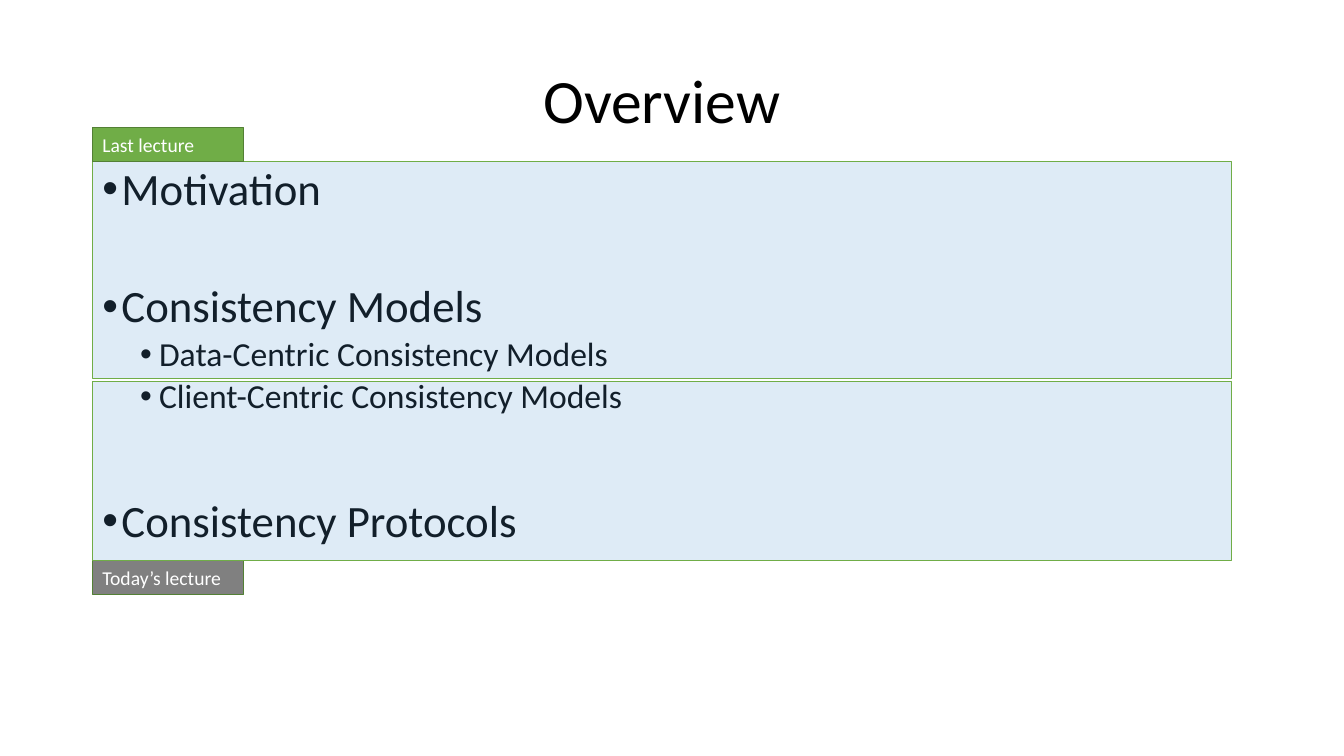
from lxml.etree import SubElement
from pptx import Presentation
from pptx.dml.color import RGBColor
from pptx.enum.shapes import MSO_SHAPE
from pptx.enum.text import MSO_ANCHOR, PP_ALIGN
from pptx.oxml.ns import qn
from pptx.util import Cm, Pt

FONT = "Calibri"
GREEN = "70AD47"
DARK_GREEN = "538035"
GREY = "808080"
BLUE = "5B9BD5"
LEFT, WIDTH = 2.33, 28.7
LABEL_WIDTH, LABEL_HEIGHT = 3.81, 0.86

# text, level, space before in points
TOPICS = [
    ("Motivation", 0, 0),
    ("Consistency Models", 0, 49.5),
    ("Data-Centric Consistency Models", 1, 3.8),
    ("Client-Centric Consistency Models", 1, 3.8),
    ("Consistency Protocols", 0, 59),
]
SIZES = [32, 24]
INDENTS = [0.48, 1.43]
HANGING = 0.48


def colour(hex_code):
    return RGBColor.from_string(hex_code)


def format_font(paragraph, size, hex_code):
    paragraph.font.name = FONT
    paragraph.font.size = Pt(size)
    paragraph.font.color.rgb = colour(hex_code)


def add_text(slide, left, top, width, height):
    frame = slide.shapes.add_textbox(Cm(left), Cm(top), Cm(width), Cm(height)).text_frame
    frame.word_wrap = True
    return frame


def add_rectangle(slide, left, top, width, height, fill, line, line_width):
    rectangle = slide.shapes.add_shape(
        MSO_SHAPE.RECTANGLE, Cm(left), Cm(top), Cm(width), Cm(height))
    rectangle.shadow.inherit = False
    rectangle.fill.solid()
    rectangle.fill.fore_color.rgb = colour(fill)
    rectangle.line.color.rgb = colour(line)
    rectangle.line.width = Pt(line_width)
    return rectangle


def add_title(slide, left, top, width, height):
    frame = add_text(slide, left, top, width, height)
    frame.vertical_anchor = MSO_ANCHOR.MIDDLE
    title = frame.paragraphs[0]
    title.text = "Overview"
    title.alignment = PP_ALIGN.CENTER
    title.line_spacing = 0.9
    format_font(title, 44, "000000")


def add_topics(slide, left, top, width, height):
    frame = add_text(slide, left, top, width, height)
    for index, (text, level, space) in enumerate(TOPICS):
        topic = frame.add_paragraph() if index else frame.paragraphs[0]
        topic.text = text
        topic.level = level
        topic.line_spacing = 0.9
        topic.space_before = Pt(space)
        properties = topic._p.get_or_add_pPr()
        properties.set("marL", str(Cm(INDENTS[level])))
        properties.set("indent", str(-Cm(HANGING)))
        SubElement(properties, qn("a:buFont")).set("typeface", "Arial")
        SubElement(properties, qn("a:buChar")).set("char", "•")
        format_font(topic, SIZES[level], "000000")


def add_highlight(slide, left, top, width, height):
    """Tint one lecture's topics with a see-through rectangle."""
    highlight = add_rectangle(slide, left, top, width, height, BLUE, GREEN, 0.5)
    tint = highlight.fill._xPr.find(qn("a:solidFill"))[0]
    SubElement(tint, qn("a:alpha")).set("val", "20000")


def add_label(slide, left, top, text, fill):
    label = add_rectangle(
        slide, left, top, LABEL_WIDTH, LABEL_HEIGHT, fill, DARK_GREEN, 1)
    frame = label.text_frame
    frame.word_wrap = True
    frame.vertical_anchor = MSO_ANCHOR.MIDDLE
    paragraph = frame.paragraphs[0]
    paragraph.text = text
    paragraph.alignment = PP_ALIGN.LEFT
    format_font(paragraph, 14, "FFFFFF")


def build_overview(presentation):
    slide = presentation.slides.add_slide(presentation.slide_layouts[6])
    last_top, last_height = 4.07, 5.46
    today_top, today_height = 9.61, 4.51
    add_title(slide, LEFT, 0.76, WIDTH, 3.68)
    add_topics(slide, LEFT, last_top, WIDTH, 13.97)
    add_highlight(slide, LEFT, last_top, WIDTH, last_height)
    add_label(slide, LEFT, last_top - LABEL_HEIGHT, "Last lecture", GREEN)
    add_label(slide, LEFT, today_top + today_height, "Today’s lecture", GREY)
    add_highlight(slide, LEFT, today_top, WIDTH, today_height)


def main():
    presentation = Presentation()
    presentation.slide_width = Cm(33.87)
    presentation.slide_height = Cm(19.05)
    build_overview(presentation)
    presentation.save("out.pptx")


if __name__ == "__main__":
    main()
